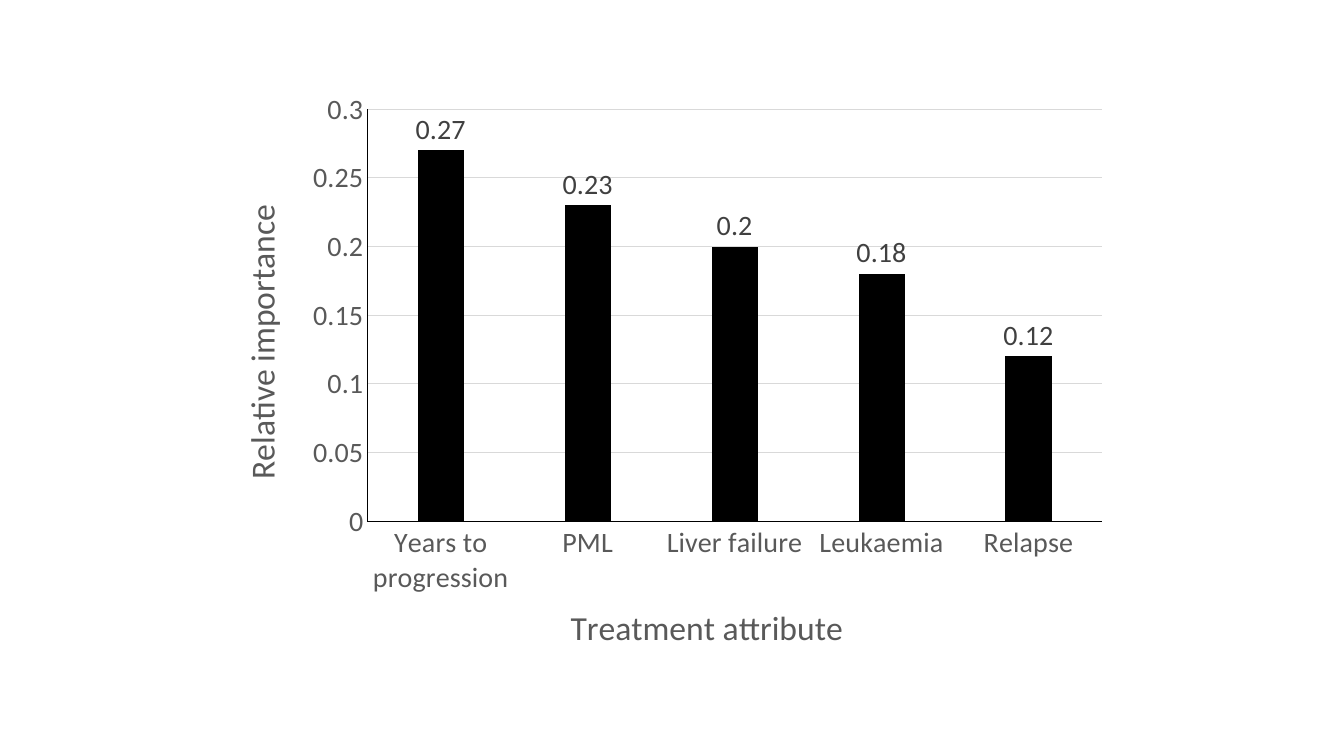
from typing import NamedTuple

from lxml import etree
from pptx import Presentation
from pptx.chart.data import CategoryChartData
from pptx.dml.color import RGBColor
from pptx.enum.chart import XL_CHART_TYPE, XL_LABEL_POSITION, XL_TICK_MARK
from pptx.oxml.ns import qn
from pptx.util import Inches, Pt

COLUMN = XL_CHART_TYPE.COLUMN_CLUSTERED
OUTSIDE = XL_LABEL_POSITION.OUTSIDE_END
NO_TICK = XL_TICK_MARK.NONE

FACE = "Calibri"
BLACK, GREY, DARK, PALE = "000000", "595959", "404040", "D9D9D9"
WIDE, HIGH = Inches(13.33), Inches(7.5)


class Bar(NamedTuple):
    name: str
    value: float


BARS = [
    Bar("Years to progression", 0.27),
    Bar("PML", 0.23),
    Bar("Liver failure", 0.2),
    Bar("Leukaemia", 0.18),
    Bar("Relapse", 0.12),
]


def color(code: str) -> RGBColor:
    return RGBColor.from_string(code)


def set_font(font, size: int, code: str) -> None:
    font.name, font.size, font.bold = FACE, Pt(size), False
    font.color.rgb = color(code)


def set_line(line, code: str) -> None:
    line.width = Pt(0.75)
    line.color.rgb = color(code)


def set_place(parent, index: int, **parts) -> None:
    """Fix a chart part at shares of the chart's size."""
    for old in parent.findall(qn("c:layout")):
        parent.remove(old)
    layout = etree.Element(qn("c:layout"))
    manual = etree.SubElement(layout, qn("c:manualLayout"))
    for key, value in parts.items():
        etree.SubElement(manual, qn(f"c:{key}")).set("val", str(value))
    parent.insert(index, layout)


def set_axis(axis, title: str, x: float, y: float) -> None:
    axis.major_tick_mark = axis.minor_tick_mark = NO_TICK
    set_font(axis.tick_labels.font, 20, GREY)
    set_line(axis.format.line, BLACK)
    frame = axis.axis_title.text_frame
    frame.text = title
    set_font(frame.paragraphs[0].font, 24, GREY)
    head = axis.axis_title._element
    set_place(head, 1, xMode="edge", yMode="edge", x=x, y=y)


def add_bars(slide) -> None:
    data = CategoryChartData()
    data.categories = [bar.name for bar in BARS]
    data.add_series("Series 1", [bar.value for bar in BARS])

    # The chart spans two thirds of the width, centred both ways
    width, height = WIDE * 2 // 3, int(HIGH * 0.79)
    left, top = (WIDE - width) // 2, (HIGH - height) // 2
    chart = slide.shapes.add_chart(COLUMN, left, top, width, height, data).chart
    chart.has_title = chart.has_legend = False
    set_font(chart.font, 20, BLACK)

    # Axes, grid and plot area
    set_axis(chart.category_axis, "Treatment attribute", 0.38, 0.87)
    scale = chart.value_axis
    set_axis(scale, "Relative importance", 0.01, 0.2)
    scale.minimum_scale, scale.maximum_scale, scale.major_unit = 0, 0.3, 0.05
    scale.has_major_gridlines = True
    set_line(scale.major_gridlines.format.line, PALE)
    area = chart._chartSpace.chart.plotArea
    set_place(area, 0, layoutTarget="inner", xMode="edge", yMode="edge",
              x=0.16, y=0.05, w=0.82, h=0.69)

    # Columns and their labels
    plot = chart.plots[0]
    plot.gap_width, plot.overlap, plot.vary_by_categories = 219, -27, False
    series = plot.series[0]
    series.format.fill.solid()
    series.format.fill.fore_color.rgb = color(BLACK)
    labels = series.data_labels
    labels.show_value = True
    labels.position = OUTSIDE
    set_font(labels.font, 20, DARK)


def main() -> None:
    deck = Presentation()
    deck.slide_width, deck.slide_height = WIDE, HIGH
    add_bars(deck.slides.add_slide(deck.slide_layouts[6]))
    deck.save("out.pptx")


if __name__ == "__main__":
    main()
